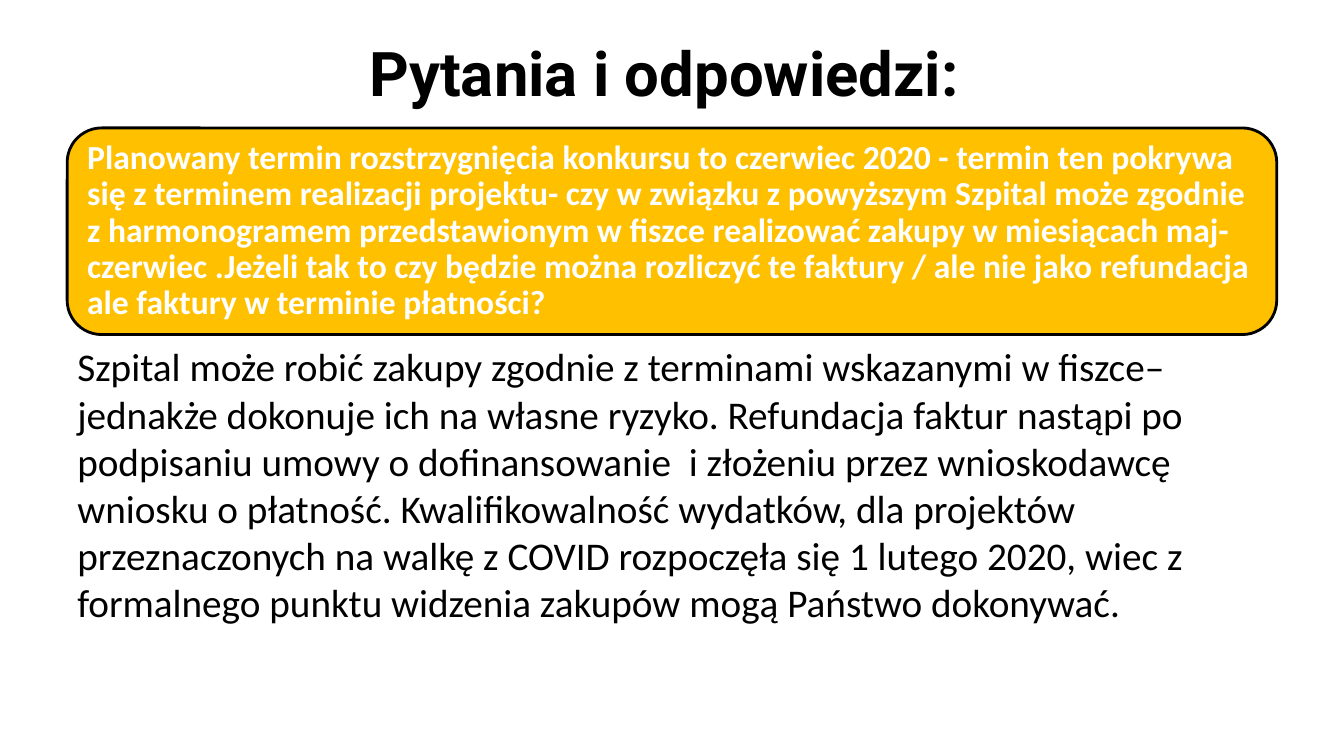
import pptx
import pptx.util
import pptx.dml.color
import pptx.enum.shapes
import pptx.enum.text
import pptx.oxml.xmlchemy

Pt = pptx.util.Pt
Inches = pptx.util.Inches
Align = pptx.enum.text.PP_ALIGN
Anchor = pptx.enum.text.MSO_ANCHOR

COLORS = {"ink": "000000", "paper": "FFFFFF", "gold": "FFC000"}

TITLE = "Pytania i odpowiedzi: "
QUERY = (
    "Planowany termin rozstrzygnięcia konkursu to czerwiec 2020 - termin ten "
    "pokrywa się z terminem realizacji projektu- czy w związku z powyższym "
    "Szpital może zgodnie z harmonogramem przedstawionym w fiszce realizować "
    "zakupy w miesiącach maj- czerwiec .Jeżeli tak to czy będzie można "
    "rozliczyć te faktury / ale nie jako refundacja ale faktury w terminie "
    "płatności?"
)
REPLY = (
    "Szpital może robić zakupy zgodnie z terminami wskazanymi w fiszce– "
    "jednakże dokonuje ich na własne ryzyko. Refundacja faktur nastąpi po "
    "podpisaniu umowy o dofinansowanie  i złożeniu przez wnioskodawcę wniosku "
    "o płatność. Kwalifikowalność wydatków, dla projektów przeznaczonych na "
    "walkę z COVID rozpoczęła się 1 lutego 2020, wiec z formalnego punktu "
    "widzenia zakupów mogą Państwo dokonywać."
)


class Page:
    """Style and current slide; lengths are percent of the slide's size."""

    left, width = 5, 90

    def __init__(self, deck):
        self.deck = deck
        self.slide = deck.slides.add_slide(deck.slide_layouts[1])

    def color(self, name):
        return pptx.dml.color.RGBColor.from_string(COLORS[name])

    def box(self, top, height):
        wide, high = self.deck.slide_width, self.deck.slide_height
        return [int(part * side / 100) for part, side in
                ((self.left, wide), (top, high), (self.width, wide), (height, high))]

    def label(self, shape, text, size, font="Calibri", ink="ink", bold=False,
              align=Align.LEFT, anchor=Anchor.TOP, lines=1.0):
        frame = shape.text_frame
        frame.text = text
        frame.word_wrap = True
        frame.auto_size = pptx.enum.text.MSO_AUTO_SIZE.NONE
        frame.vertical_anchor = anchor
        para = frame.paragraphs[0]
        para.alignment, para.line_spacing = align, lines
        para.space_before = Pt(0)
        # Plain paragraph: no bullet, no hanging indent
        props = para._p.get_or_add_pPr()
        props.set("marL", "0")
        props.set("indent", "0")
        props.append(pptx.oxml.xmlchemy.OxmlElement("a:buNone"))
        para.font.name, para.font.size = font, Pt(size)
        para.font.bold = bold
        para.font.color.rgb = self.color(ink)

    def place(self, shape, top, height):
        shape.left, shape.top, shape.width, shape.height = self.box(top, height)

    def title(self, text, top, height):
        shape = self.slide.shapes.title
        self.place(shape, top, height)
        self.label(shape, text, 44, "Roboto", bold=True, align=Align.CENTER)

    def panel(self, text, top, height):
        kind = pptx.enum.shapes.MSO_SHAPE.ROUNDED_RECTANGLE
        shape = self.slide.shapes.add_shape(kind, *self.box(top, height))
        shape.shadow.inherit = False
        shape.fill.solid()
        shape.fill.fore_color.rgb = self.color("gold")
        shape.line.color.rgb = self.color("ink")
        shape.line.width = Pt(2)
        frame = shape.text_frame
        # The rounded corners add their own inset of about 0.1 inch
        frame.margin_left = frame.margin_right = Inches(0.1)
        frame.margin_top = frame.margin_bottom = Inches(0.1)
        self.label(shape, text, 24, ink="paper", bold=True,
                   anchor=Anchor.MIDDLE, lines=0.9)

    def body(self, text, top, height):
        shape = self.slide.placeholders[1]
        self.place(shape, top, height)
        self.label(shape, text, 28)


def main():
    deck = pptx.Presentation()
    deck.slide_width, deck.slide_height = Inches(13.33), Inches(7.5)
    page = Page(deck)
    # Heading, question, answer
    page.title(TITLE, 4, 16.67)
    page.panel(QUERY, 16.93, 27.33)
    page.body(REPLY, 44.67, 39.07)
    deck.save("out.pptx")


if __name__ == "__main__":
    main()
